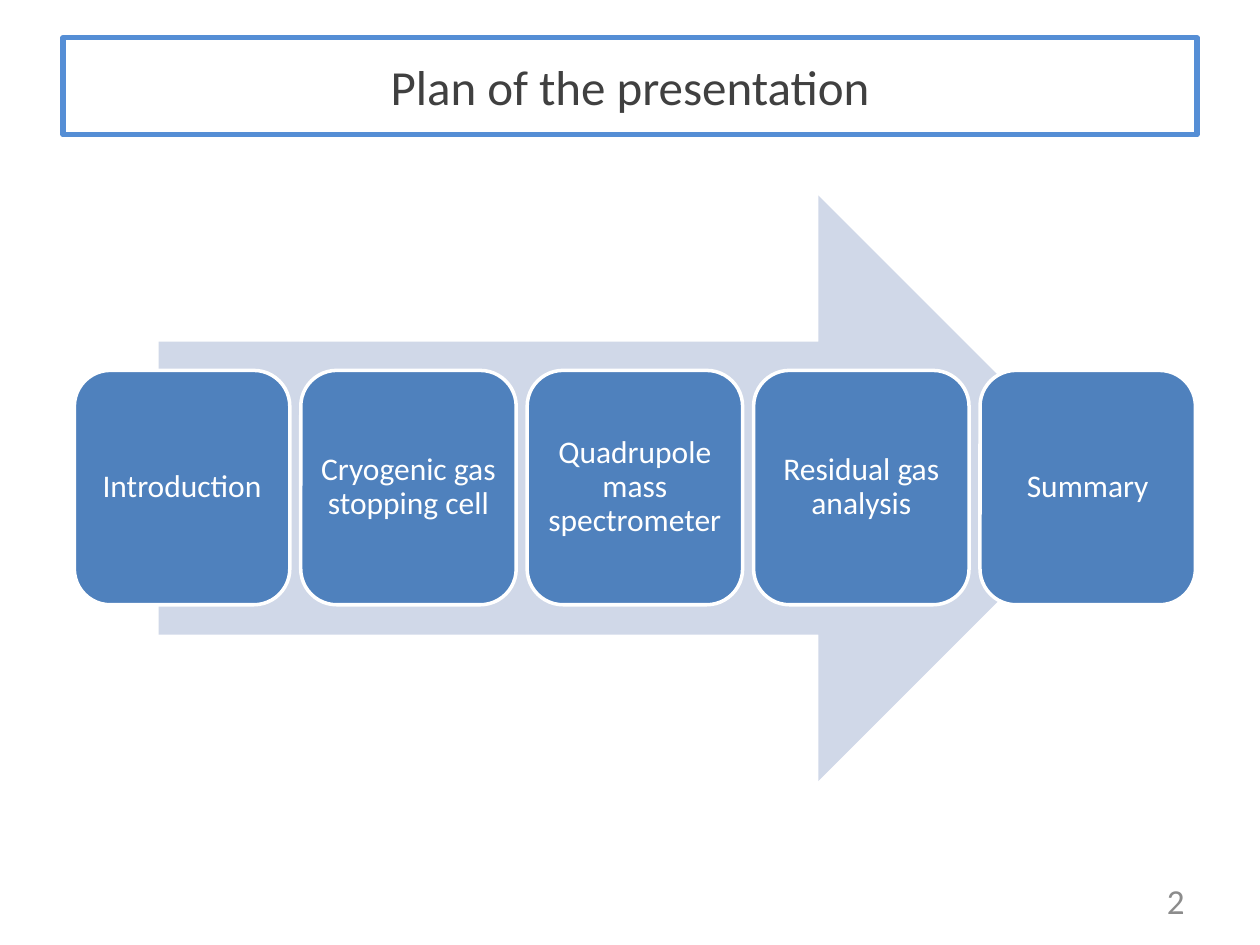
from pptx import Presentation, util as u
from pptx.dml.color import RGBColor
from pptx.enum import shapes, text

TITLE = "Plan of the presentation"
STEPS = ["Introduction", "Cryogenic gas stopping cell",
         "Quadrupole mass spectrometer", "Residual gas analysis", "Summary"]
PAGE = "2"
HUES = {"frame": "558ED5", "title": "404040", "page": "8C8C8C",
        "arrow": "D0D8E8", "step": "4F81BD", "white": "FFFFFF"}
LEFT, TOP, WIDE, HIGH, PITCH = 0.59, 2.94, 1.71, 1.86, 1.797
PAD = 0.07


def hue(name):
    return RGBColor.from_string(HUES[name])


def write(frame, words, size, color, align):
    frame.word_wrap = True
    frame.vertical_anchor = text.MSO_ANCHOR.MIDDLE
    para = frame.paragraphs[0]
    para.alignment = align
    run = para.add_run()
    run.text = words
    run.font.name = "Calibri"
    run.font.size = u.Pt(size)
    run.font.color.rgb = hue(color)
    return para


def outline(shape, color, width):
    shape.line.color.rgb = hue(color)
    shape.line.width = u.Pt(width)


def add(slide, kind, box, fill):
    shape = slide.shapes.add_shape(kind, *map(u.Inches, box))
    shape.shadow.inherit = False
    shape.fill.solid()
    shape.fill.fore_color.rgb = hue(fill)
    return shape


def main():
    deck = Presentation()
    deck.slide_width, deck.slide_height = u.Inches(10), u.Inches(7.5)
    slide = deck.slides.add_slide(deck.slide_layouts[5])
    center = text.PP_ALIGN.CENTER

    title = slide.shapes.title
    title.left, title.top, title.width, title.height = map(
        u.Inches, (0.5, 0.3, 9, 0.77))
    outline(title, "frame", 3)
    write(title.text_frame, TITLE, 28, "title", center)

    kind = shapes.MSO_SHAPE
    arrow = add(slide, kind.RIGHT_ARROW, (1.26, 1.55, 7.56, 4.65), "arrow")
    arrow.line.fill.background()

    for i, words in enumerate(STEPS):
        box = (LEFT + i * PITCH, TOP, WIDE, HIGH)
        step = add(slide, kind.ROUNDED_RECTANGLE, box, "step")
        outline(step, "white", 2)
        frame = step.text_frame
        frame.margin_left = frame.margin_right = u.Inches(PAD)
        frame.margin_top = frame.margin_bottom = u.Inches(PAD)
        write(frame, words, 18, "white", center).line_spacing = 0.9

    page = slide.shapes.add_textbox(*map(u.Inches, (7.17, 6.95, 2.33, 0.4)))
    write(page.text_frame, PAGE, 20, "page", text.PP_ALIGN.RIGHT)
    deck.save("out.pptx")


if __name__ == "__main__":
    main()
